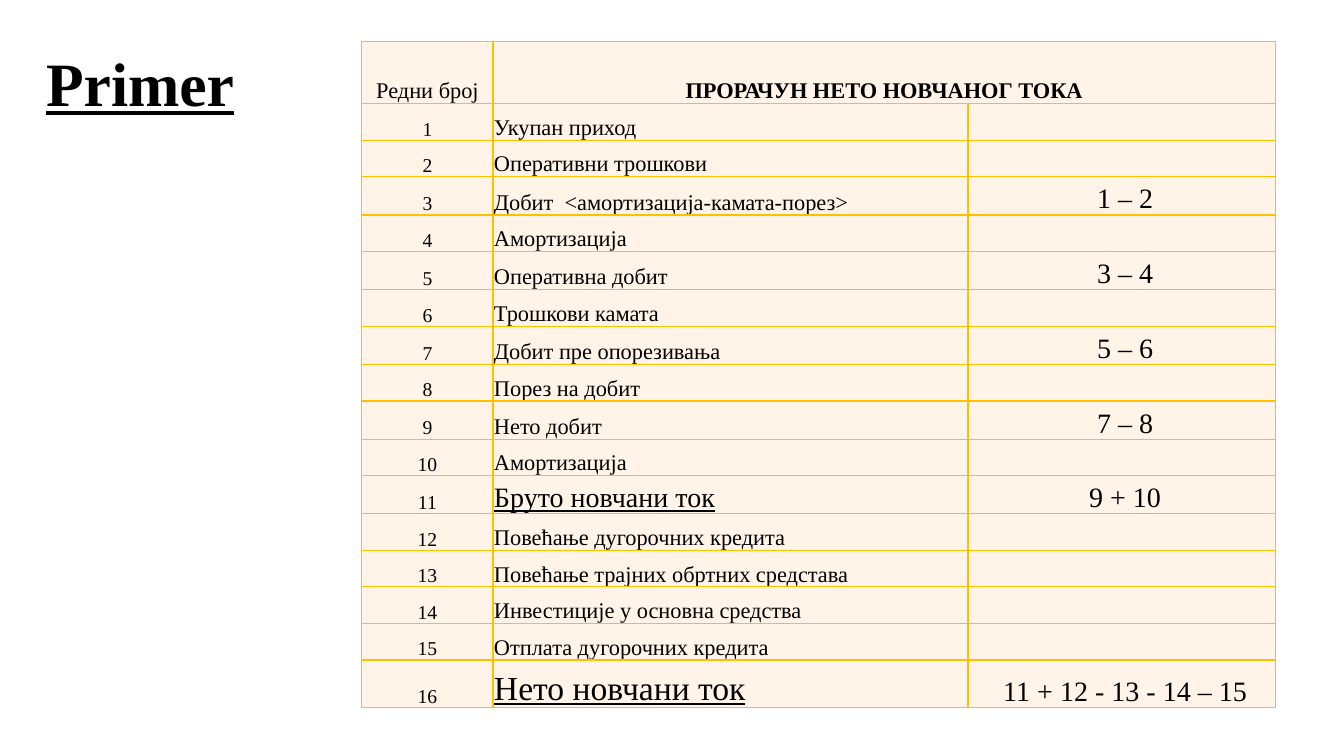
from lxml.etree import SubElement
from pptx import Presentation
from pptx.dml.color import RGBColor
from pptx.enum.text import MSO_ANCHOR, PP_ALIGN
from pptx.oxml.ns import qn
from pptx.util import Pt

COLORS = {"text": "000000", "cell": "FFF4E7", "border": "FFC000"}
FONT = "Times New Roman"
HEADER_HEIGHT, PLAIN_HEIGHT, FORMULA_HEIGHT, LAST_HEIGHT = 44.6, 26.1, 27.3, 33.8
COLUMN_WIDTHS = [93.7, 339.2, 219.6]

# Item, its size, and the formula that yields it
ITEMS = [
    ("Укупан приход", 16, ""),
    ("Оперативни трошкови", 16, ""),
    ("Добит  <амортизација-камата-порез>", 16, " 1 – 2"),
    ("Амортизација", 16, ""),
    ("Оперативна добит", 16, " 3 – 4"),
    ("Трошкови камата", 16, ""),
    ("Добит пре опорезивања", 16, " 5 – 6"),
    ("Порез на добит", 16, ""),
    ("Нето добит", 16, " 7 – 8"),
    ("Амортизација", 16, ""),
    ("Бруто новчани ток", 20, " 9 + 10"),
    ("Повећање дугорочних кредита", 16, ""),
    ("Повећање трајних обртних средстава", 16, ""),
    ("Инвестиције у основна средства", 16, ""),
    ("Отплата дугорочних кредита", 16, ""),
    ("Нето новчани ток", 24, " 11 + 12 - 13 - 14 – 15"),
]


def add_text(para, text, size, align=PP_ALIGN.CENTER, bold=False, underline=False):
    para.alignment = align
    span = para.add_run()
    span.text = text
    span.font.name = FONT
    span.font.size = Pt(size)
    span.font.bold = bold
    span.font.underline = underline
    span.font.color.rgb = RGBColor.from_string(COLORS["text"])


def style_cell(cell):
    properties = cell._tc.get_or_add_tcPr()
    for side in ("a:lnL", "a:lnR", "a:lnT", "a:lnB"):
        line = SubElement(properties, qn(side), w=str(Pt(1)))
        fill = SubElement(line, qn("a:solidFill"))
        SubElement(fill, qn("a:srgbClr"), val=COLORS["border"])
    cell.fill.solid()
    cell.fill.fore_color.rgb = RGBColor.from_string(COLORS["cell"])
    cell.vertical_anchor = MSO_ANCHOR.BOTTOM
    cell.margin_left = cell.margin_right = cell.margin_top = Pt(0.7)
    cell.margin_bottom = Pt(0)


deck = Presentation()
deck.slide_width, deck.slide_height = Pt(960), Pt(540)
page = deck.slides.add_slide(deck.slide_layouts[6])

# Title
box = page.shapes.add_textbox(Pt(25.9), Pt(9.4), Pt(828), Pt(104.4))
box.text_frame.word_wrap = True
box.text_frame.vertical_anchor = MSO_ANCHOR.MIDDLE
title = box.text_frame.paragraphs[0]
title.line_spacing = 0.9
add_text(title, "Primer", 44, PP_ALIGN.LEFT, bold=True, underline=True)

# Table grid: rows with a formula are slightly taller
heights = [HEADER_HEIGHT]
heights += [FORMULA_HEIGHT if formula else PLAIN_HEIGHT for _, _, formula in ITEMS]
heights[-1] = LAST_HEIGHT
table = page.shapes.add_table(
    len(heights), len(COLUMN_WIDTHS), Pt(258.5), Pt(29.5),
    Pt(sum(COLUMN_WIDTHS)), Pt(sum(heights))).table
table.first_row = table.horz_banding = False
for column, width in zip(table.columns, COLUMN_WIDTHS):
    column.width = Pt(width)
for row, height in zip(table.rows, heights):
    row.height = Pt(height)
for cell in table.iter_cells():
    style_cell(cell)

# Header row
table.cell(0, 1).merge(table.cell(0, 2))
add_text(table.cell(0, 0).text_frame.paragraphs[0], "Редни број", 16)
add_text(table.cell(0, 1).text_frame.paragraphs[0],
         "ПРОРАЧУН НЕТО НОВЧАНОГ ТОКА", 16, bold=True)

# Numbered rows: the larger items are the underlined results
for number, (item, size, formula) in enumerate(ITEMS, start=1):
    paras = [table.cell(number, index).text_frame.paragraphs[0] for index in range(3)]
    add_text(paras[0], str(number), 14)
    add_text(paras[1], item, size, PP_ALIGN.LEFT, underline=size > 16)
    if formula:
        add_text(paras[2], formula, 20)

deck.save("out.pptx")
